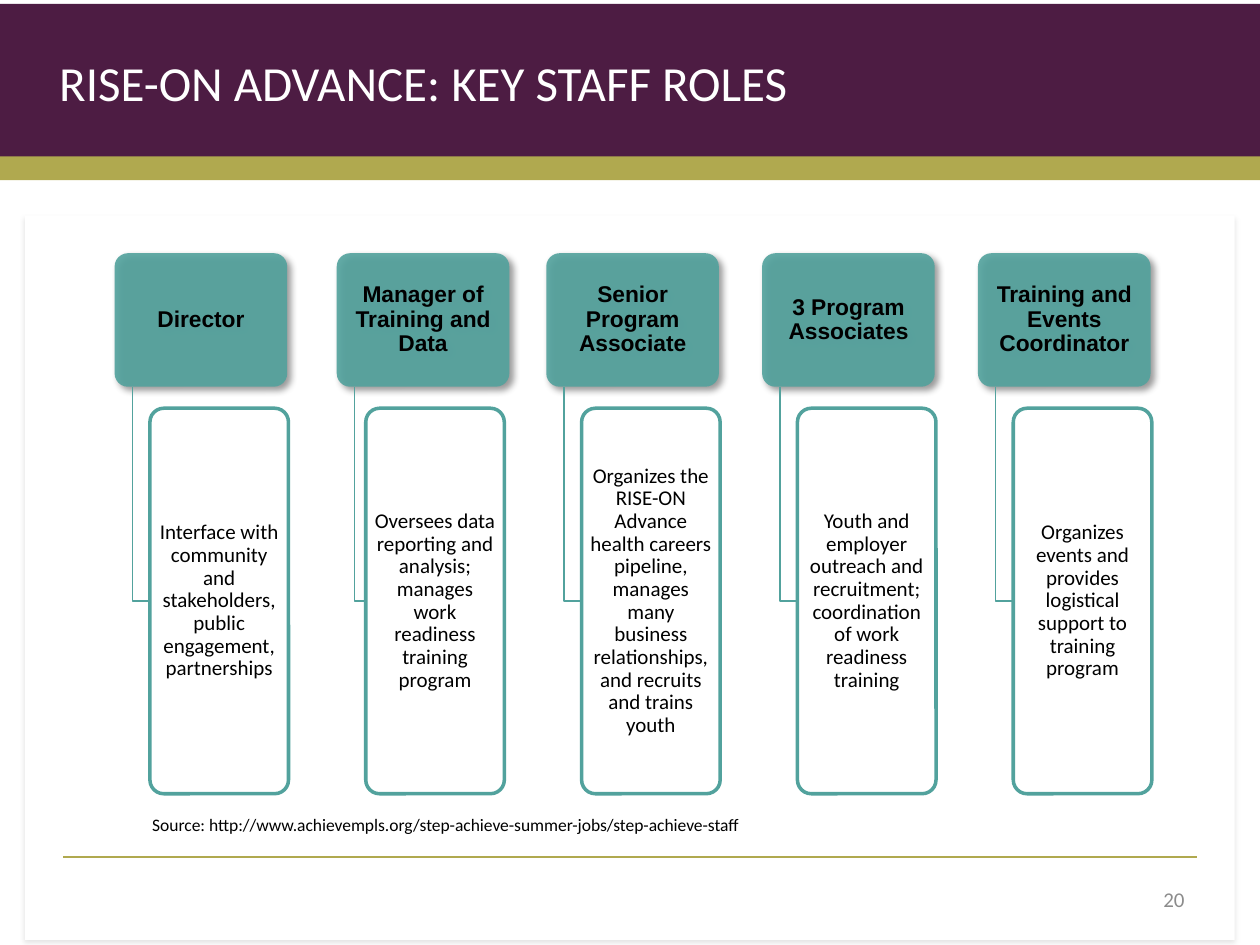
from lxml import etree
from pptx import Presentation
from pptx import util as u
from pptx.dml.color import RGBColor
from pptx.enum import shapes as kinds, text as layout
from pptx.oxml.ns import qn

COLORS = {"plum": "4D1C43", "olive": "B0A94F", "teal": "52A29D",
          "white": "FFFFFF", "black": "000000", "gray": "8C8C8C"}

deck = Presentation()
deck.slide_width, deck.slide_height = u.Inches(10), u.Inches(7.5)
COL, ROW = deck.slide_width / 100, deck.slide_height / 75
slide = deck.slides.add_slide(deck.slide_layouts[5])
items = slide.shapes


def write(frame, words, size=12, font="Calibri", color="black", bold=False,
          align="LEFT", anchor="MIDDLE", spacing=1.0, insets=(0.1, 0.05, 0.1, 0.05)):
    frame.word_wrap = True
    frame.auto_size = layout.MSO_AUTO_SIZE.NONE
    frame.vertical_anchor = layout.MSO_ANCHOR[anchor]
    (frame.margin_left, frame.margin_top,
     frame.margin_right, frame.margin_bottom) = map(u.Inches, insets)
    line = frame.paragraphs[0]
    line.alignment = layout.PP_ALIGN[align]
    line.line_spacing = spacing
    run = line.add_run()
    run.text = words
    run.font.size, run.font.name, run.font.bold = u.Pt(size), font, bold
    run.font.color.rgb = RGBColor.from_string(COLORS[color])


def panel(kind, x, y, w, h, fill, alpha=100, edge=None, shadow=None):
    box = items.add_shape(kinds.MSO_SHAPE[kind], *map(int, (x * COL, y * ROW, w * COL, h * ROW)))
    box.shadow.inherit = False
    box.fill.solid()
    box.fill.fore_color.rgb = RGBColor.from_string(COLORS[fill])
    tint = box.fill._xPr.find(".//" + qn("a:srgbClr"))
    if alpha < 100:
        etree.SubElement(tint, qn("a:alpha"), val=str(alpha * 1000))
    if edge:
        box.line.color.rgb = RGBColor.from_string(COLORS[edge])
        box.line.width = u.Pt(2)
    else:
        box.line.fill.background()
    if kind == "ROUNDED_RECTANGLE":
        box.adjustments[0] = 0.1
    if shadow:
        opacity, blur, distance, angle = shadow
        effects = box._element.spPr.find(qn("a:effectLst"))
        outer = etree.SubElement(effects, qn("a:outerShdw"), blurRad=str(u.Pt(blur)),
                                 dist=str(u.Pt(distance)), dir=str(angle * 60000),
                                 algn="tl", rotWithShape="0")
        shade = etree.SubElement(outer, qn("a:srgbClr"), val=COLORS["black"])
        etree.SubElement(shade, qn("a:alpha"), val=str(opacity * 1000))
    return box


panel("RECTANGLE", 0, 0.3, 100, 12.5, "plum")
panel("RECTANGLE", 0, 12.4, 100, 1.9, "olive")
panel("RECTANGLE", 2, 17.1, 96, 57.5, "white", shadow=(10, 3.1, 1.8, 90))

footer_rule = items.add_connector(kinds.MSO_CONNECTOR.STRAIGHT,
                                  *map(int, (5 * COL, 68 * ROW, 95 * COL, 68 * ROW)))
footer_rule.line.color.rgb = RGBColor.from_string(COLORS["olive"])
footer_rule.line.width = u.Pt(1)
etree.SubElement(footer_rule._element.spPr, qn("a:effectLst"))

heading = items.title
heading.left, heading.top = int(0.2 * COL), int(3.4 * ROW)
heading.width, heading.height = int(74 * COL), int(6.2 * ROW)
items._spTree.append(heading._element)
write(heading.text_frame, "RISE-ON ADVANCE: KEY STAFF ROLES", size=28, color="white",
      insets=(0.45, 0.05, 0.1, 0.05))

STAFF = [
    ("Director",
     "Interface with community and stakeholders, public engagement, partnerships"),
    ("Manager of Training and Data",
     "Oversees data reporting and analysis; manages work readiness training program"),
    ("Senior Program Associate",
     "Organizes the RISE-ON Advance health careers pipeline, manages many business "
     "relationships, and recruits and trains youth"),
    ("3 Program Associates",
     "Youth and employer outreach and recruitment; coordination of work readiness training"),
    ("Training and Events Coordinator",
     "Organizes events and provides logistical support to training program"),
]
FIRST, PITCH = 11.9, 17.13
ROLE_TOP, ROLE_HEIGHT = 20.1, 10.6
DUTY_TOP, DUTY_HEIGHT = 32.4, 30.6
NUDGES = {1: 0.5}
SNUG = (0.03, 0.02, 0.03, 0.02)

for index, (role, duty) in enumerate(STAFF):
    duty_left = FIRST + index * PITCH
    role_left = duty_left - 2.8 + NUDGES.get(index, 0)
    branch = role_left + 1.4
    role_box = panel("ROUNDED_RECTANGLE", role_left, ROLE_TOP, 13.7, ROLE_HEIGHT,
                     "teal", alpha=90, shadow=(43, 4, 3, 45))
    write(role_box.text_frame, role, size=13, font="Arial", bold=True,
          align="CENTER", spacing=0.9, insets=SNUG)

    middle = DUTY_TOP + DUTY_HEIGHT / 2
    elbow = items.build_freeform(int(branch * COL), int((ROLE_TOP + ROLE_HEIGHT) * ROW))
    elbow.add_line_segments([(int(branch * COL), int(middle * ROW)),
                             (int(duty_left * COL), int(middle * ROW))], close=False)
    link = elbow.convert_to_shape()
    link.shadow.inherit = False
    link.fill.background()
    link.line.color.rgb = RGBColor.from_string(COLORS["teal"])
    link.line.width = u.Pt(1 if index else 0.75)

    duty_box = panel("ROUNDED_RECTANGLE", duty_left, DUTY_TOP, 11, DUTY_HEIGHT,
                     "white", alpha=90, edge="teal")
    write(duty_box.text_frame, duty, align="CENTER", spacing=0.9, insets=SNUG)

source = items.add_textbox(*map(int, (11.1 * COL, 64.1 * ROW, 83.9 * COL, 2.7 * ROW)))
write(source.text_frame,
      "Source: http://www.achievempls.org/step-achieve-summer-jobs/step-achieve-staff",
      size=10, anchor="TOP")

page = items.add_textbox(*map(int, (71.7 * COL, 69.4 * ROW, 23.3 * COL, 4 * ROW)))
write(page.text_frame, "20", color="gray", align="RIGHT")

deck.save("out.pptx")
